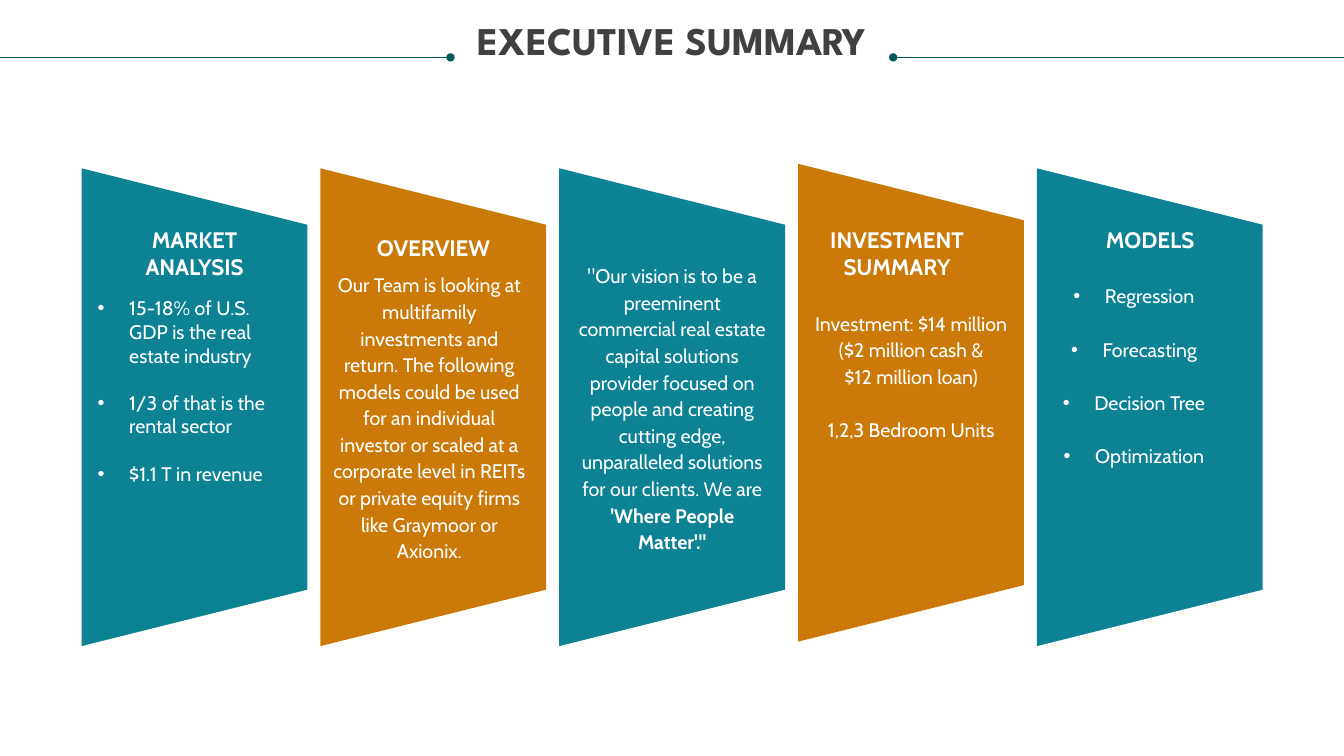
from dataclasses import dataclass

from lxml.etree import SubElement
from pptx import Presentation
from pptx.dml.color import RGBColor as Color
from pptx.enum.shapes import MSO_CONNECTOR as Connector, MSO_SHAPE as Shape
from pptx.enum.text import MSO_ANCHOR as Anchor, MSO_AUTO_SIZE as AutoSize, PP_ALIGN as Align
from pptx.oxml.ns import qn
from pptx.util import Pt


@dataclass(frozen=True)
class Theme:
    teal: Color = Color(0x0D, 0x82, 0x95)
    orange: Color = Color(0xCB, 0x7A, 0x09)
    rule: Color = Color(0x08, 0x57, 0x64)
    dark: Color = Color(0x40, 0x40, 0x40)
    white: Color = Color(0xFF, 0xFF, 0xFF)
    title_font: str = "League Spartan"
    text_font: str = "Cabin"
    title_size: int = 28
    heading_size: int = 16
    text_size: int = 14
    leading: int = 19


class SummaryPage:
    def __init__(self, theme, page):
        self.theme = theme
        self.page = page

    def frame(self, box, place):
        box.left, box.top, box.width, box.height = map(Pt, place)
        frame = box.text_frame
        frame.word_wrap = True
        frame.auto_size = AutoSize.NONE
        frame.vertical_anchor = Anchor.TOP
        frame.margin_left = frame.margin_right = 0
        frame.margin_top = frame.margin_bottom = 0
        return frame

    def style(self, para, font, size, color, bold=False):
        for span in para.runs:
            span.font.name = font
            span.font.size = Pt(size)
            span.font.bold = bold
            span.font.color.rgb = color

    def title(self, text, place):
        frame = self.frame(self.page.shapes.title, place)
        frame.text = text
        para = frame.paragraphs[0]
        para.alignment = Align.CENTER
        para.line_spacing = 0.9
        self.style(para, self.theme.title_font, self.theme.title_size, self.theme.dark, True)

    def rule(self, start, end, y, dot_end):
        line = self.page.shapes.add_connector(
            Connector.STRAIGHT, Pt(start), Pt(y), Pt(end), Pt(y))
        line.line.color.rgb = self.theme.rule
        line.line.width = Pt(0.5)
        SubElement(line.line._get_or_add_ln(), qn(f"a:{dot_end}"), type="oval")
        SubElement(line.element.spPr, qn("a:effectLst"))

    def panel(self, center_x, center_y, length, breadth, color):
        panel = self.page.shapes.add_shape(
            Shape.TRAPEZOID, Pt(center_x - length / 2), Pt(center_y - breadth / 2),
            Pt(length), Pt(breadth))
        panel.rotation = 90
        panel.shadow.inherit = False
        panel.fill.solid()
        panel.fill.fore_color.rgb = color
        panel.line.fill.background()

    def text(self, lines, place, heading=False):
        frame = self.frame(self.page.shapes.add_textbox(0, 0, 0, 0), place)
        frame.text = "\n".join(lines)
        size = self.theme.heading_size if heading else self.theme.text_size
        for para in frame.paragraphs:
            para.alignment = Align.CENTER
            if not heading:
                para.line_spacing = Pt(self.theme.leading)
            self.style(para, self.theme.text_font, size, self.theme.white, heading)
        return frame

    def bullets(self, index, items, place, align, spacing, gap):
        box = self.page.placeholders[index]
        box.element.getparent().append(box.element)
        frame = self.frame(box, place)
        frame.text = "\n".join(items)
        for number, para in enumerate(frame.paragraphs):
            props = para._p.get_or_add_pPr()
            props.set("marL", str(Pt(22.5)))
            props.set("indent", str(Pt(-22.5)))
            SubElement(props, qn("a:buFont"), typeface="Arial")
            SubElement(props, qn("a:buChar"), char="•")
            para.alignment = align
            para.line_spacing = spacing
            para.space_before = Pt(gap if number else 0)
            self.style(para, self.theme.text_font, self.theme.text_size, self.theme.white)


def main():
    theme = Theme()
    deck = Presentation()
    deck.slide_width, deck.slide_height = Pt(960), Pt(540)
    summary = SummaryPage(theme, deck.slides.add_slide(deck.slide_layouts[3]))

    summary.title("EXECUTIVE SUMMARY", (18, 15.1, 924, 30.2))
    summary.rule(0, 321.8, 41, "tailEnd")
    summary.rule(638, 960, 41, "headEnd")

    for number, rise in enumerate((0, 0, 0, 3.2, 0)):
        color = theme.orange if number % 2 else theme.teal
        summary.panel(138.9 + 170.6 * number, 290.9 - rise, 341.3, 161.3, color)

    headings = (
        (["MARKET", "ANALYSIS"], 85, 161.3),
        (["OVERVIEW"], 255.6, 167),
        (["INVESTMENT SUMMARY"], 586.8, 161.3),
        (["MODELS"], 767.5, 161.3),
    )
    for lines, left, top in headings:
        summary.text(lines, (left, top, 108, 39), heading=True)

    width = 138.2
    summary.bullets(1, [
        "15-18% of U.S. GDP is the real estate industry",
        "1/3 of that is the rental sector",
        "$1.1 T in revenue",
    ], (69.8, 211.7, width, 152.6), Align.LEFT, 1.0, 17)

    summary.text([
        "Our Team is looking at multifamily investments and return. The following "
        "models could be used for an individual investor or scaled at a corporate "
        "level in REITs or private equity firms like Graymoor or Axionix."
    ], (237.6, 193, width, 209))

    vision = summary.text([
        "\"Our vision is to be a preeminent commercial real estate capital solutions "
        "provider focused on people and creating cutting edge, unparalleled solutions "
        "for our clients. We are "
    ], (411.1, 186.5, width, 209.5)).paragraphs[0]
    slogan = vision.add_run()
    slogan.text = "'Where People Matter'.\""
    summary.style(vision, theme.text_font, theme.text_size, theme.white)
    slogan.font.bold = True

    investment = summary.text([
        "Investment: $14 million",
        "($2 million cash &",
        "$12 million loan)",
        "1,2,3 Bedroom Units",
    ], (581.8, 220.3, width, 113.8))
    investment.paragraphs[-1].space_before = Pt(theme.leading)

    summary.bullets(2, ["Regression", "Forecasting", "Decision Tree", "Optimization"],
                    (740.9, 200.9, width, 132.5), Align.CENTER,
                    Pt(theme.leading), theme.leading)

    deck.save("out.pptx")


if __name__ == "__main__":
    main()
